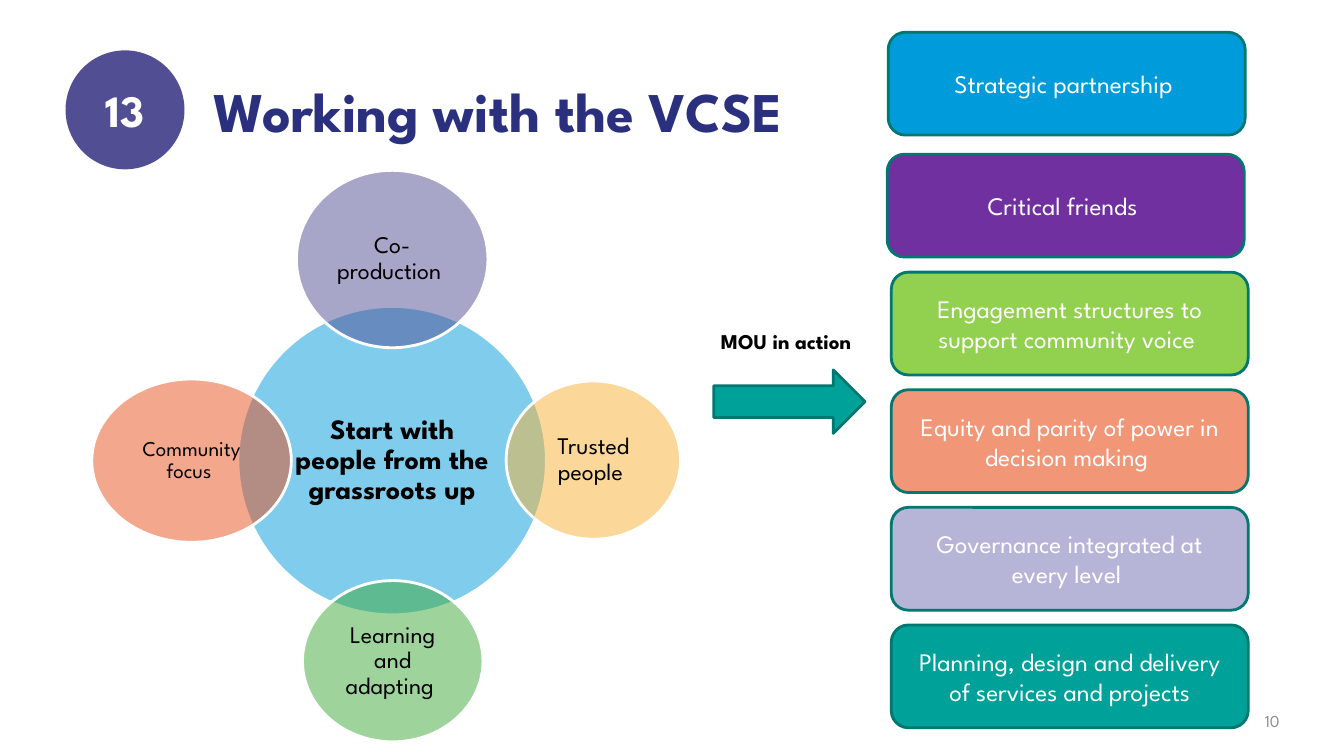
from lxml import etree
from pptx import Presentation
from pptx.dml.color import RGBColor
from pptx.enum import shapes, text
from pptx.oxml import ns
from pptx.util import Inches, Pt

FONT = "League Spartan"
WHITE = RGBColor(0xFF, 0xFF, 0xFF)
BLACK = RGBColor(0, 0, 0)
GREY = RGBColor(0x8C, 0x8C, 0x8C)
NAVY = RGBColor(0x2B, 0x30, 0x7E)
INDIGO = RGBColor(0x51, 0x4E, 0x93)
TEAL = RGBColor(0x00, 0xA1, 0x98)
DARK_TEAL = RGBColor(0x00, 0x77, 0x70)
BLUE = RGBColor(0x00, 0x9B, 0xDA)
PURPLE = RGBColor(0x70, 0x30, 0xA0)
LIME = RGBColor(0x92, 0xD0, 0x50)
SALMON = RGBColor(0xF1, 0x96, 0x77)
LILAC = RGBColor(0xB6, 0xB5, 0xD7)
YELLOW = RGBColor(0xF9, 0xB3, 0x34)
GREEN = RGBColor(0x3E, 0xAB, 0x38)
ORANGE = RGBColor(0xE8, 0x50, 0x1D)

SHAPE = shapes.MSO_SHAPE
ALIGN = text.PP_ALIGN
ANCHOR = text.MSO_ANCHOR
INSCRIBED = 0.1464  # margin of the rectangle inscribed in an ellipse

# left, top, width, height, colour, label, text size
PETALS = [
    (2.94, 1.69, 1.9, 1.76, INDIGO, "Co-production ", 17),
    (5.02, 3.78, 1.73, 1.57, YELLOW, "Trusted people ", 17),
    (3.0, 5.76, 1.79, 1.6, GREEN, "Learning and adapting ", 17),
    (0.91, 3.76, 1.98, 1.62, ORANGE, "Community focus ", 15),
]
TOP_CARDS = [
    (8.81, 0.32, BLUE, "Strategic partnership "),
    (8.8, 1.53, PURPLE, "Critical friends "),
]
STACKED_CARDS = [
    (LIME, "Engagement structures to support community voice "),
    (SALMON, "Equity and parity of power in decision making "),
    (LILAC, "Governance integrated at every level "),
    (TEAL, "Planning, design and delivery of services and projects"),
]


def write(sp, words, size, color, bold=False, align=ALIGN.CENTER,
          anchor=ANCHOR.MIDDLE, spacing=None, inset=None):
    tf = sp.text_frame
    tf.word_wrap = True
    tf.vertical_anchor = anchor
    if inset is not None:
        tf.margin_left = tf.margin_right = Inches(inset)
        tf.margin_top = tf.margin_bottom = Inches(inset)
    p = tf.paragraphs[0]
    p.alignment = align
    if spacing:
        p.line_spacing = spacing
    r = p.add_run()
    r.text = words
    r.font.name = FONT
    r.font.size = Pt(size)
    r.font.bold = bold
    r.font.color.rgb = color


def add_text(s, x, y, w, h, *args, **kwargs):
    box = s.shapes.add_textbox(Inches(x), Inches(y), Inches(w), Inches(h))
    write(box, *args, **kwargs)


def add_block(s, kind, x, y, w, h, fill, line=None):
    sp = s.shapes.add_shape(kind, Inches(x), Inches(y), Inches(w), Inches(h))
    sp.shadow.inherit = False
    sp.fill.solid()
    sp.fill.fore_color.rgb = fill
    if line is None:
        sp.line.fill.background()
    else:
        sp.line.color.rgb = line
        sp.line.width = Pt(2)
    return sp


def add_header(s, x, y, size):
    add_block(s, SHAPE.OVAL, x, y, size, size, INDIGO)
    add_text(s, x, y + 0.28, size, 0.62, "13", 32, WHITE, bold=True)
    add_text(s, x + 1.37, y - 0.08, 10.66, 1.35, "Working with the VCSE", 40,
             NAVY, bold=True, align=ALIGN.LEFT)


def add_bubble(s, x, y, w, h, fill, words, size, bold=False, inset=0.02):
    """Half-transparent ellipse with its label in the inscribed rectangle."""
    sp = add_block(s, SHAPE.OVAL, x, y, w, h, fill, WHITE)
    color = sp.fill._xPr.find(ns.qn("a:solidFill"))[0]
    etree.SubElement(color, ns.qn("a:alpha"), val="50000")
    dx, dy = w * INSCRIBED, h * INSCRIBED
    add_text(s, x + dx, y + dy, w - 2 * dx, h - 2 * dy, words, size, BLACK,
             bold=bold, spacing=0.9, inset=inset)


def add_flower(s):
    add_bubble(s, 2.36, 3.04, 3.06, 3.06, BLUE,
               "Start with people from the grassroots up", 20,
               bold=True, inset=0.03)
    for petal in PETALS:
        add_bubble(s, *petal)


def add_mou_arrow(s, x, y):
    add_text(s, x, y, 2.13, 0.35, "MOU in action ", 15, BLACK, bold=True,
             anchor=ANCHOR.TOP)
    add_block(s, SHAPE.RIGHT_ARROW, x + 0.32, y + 0.46, 1.5, 0.63, TEAL,
              DARK_TEAL)


def add_card(s, x, y, fill, words):
    sp = add_block(s, SHAPE.ROUNDED_RECTANGLE, x, y, 3.54, 1.02, fill,
                   DARK_TEAL)
    write(sp, words, 18, WHITE)


def add_cards(s, x, y, pitch):
    for card in TOP_CARDS:
        add_card(s, *card)
    for i, (fill, words) in enumerate(STACKED_CARDS):
        add_card(s, x, y + i * pitch, fill, words)


def main():
    prs = Presentation()
    prs.slide_width, prs.slide_height = Inches(13.33), Inches(7.5)
    s = prs.slides.add_slide(prs.slide_layouts[6])
    add_header(s, 0.65, 0.5, 1.18)
    add_text(s, 12.26, 6.95, 0.53, 0.4, "10", 12, GREY, align=ALIGN.RIGHT)
    add_mou_arrow(s, 6.76, 3.21)
    add_flower(s)
    add_cards(s, 8.84, 2.7, 3.5 / 3)
    prs.save("out.pptx")


if __name__ == "__main__":
    main()
